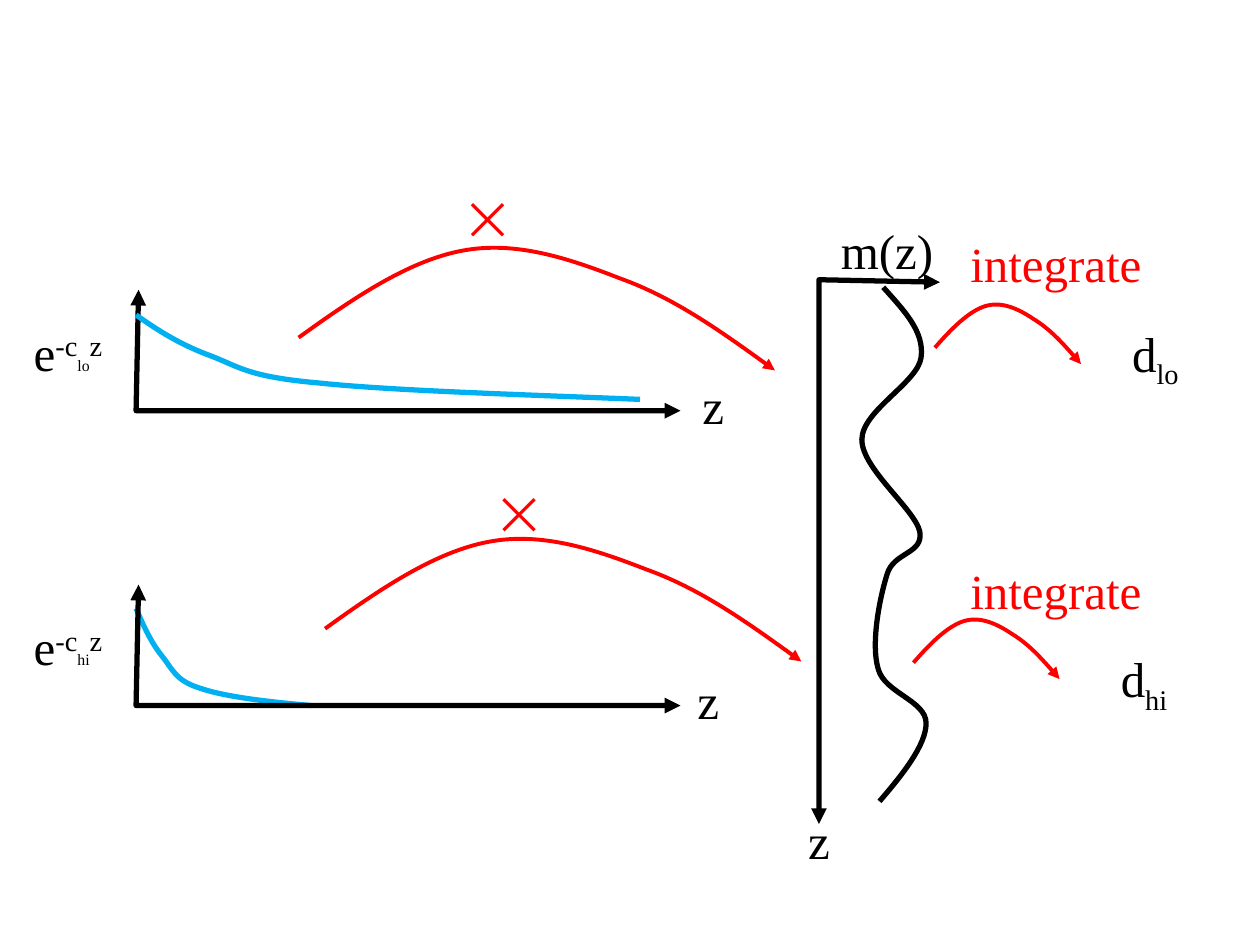
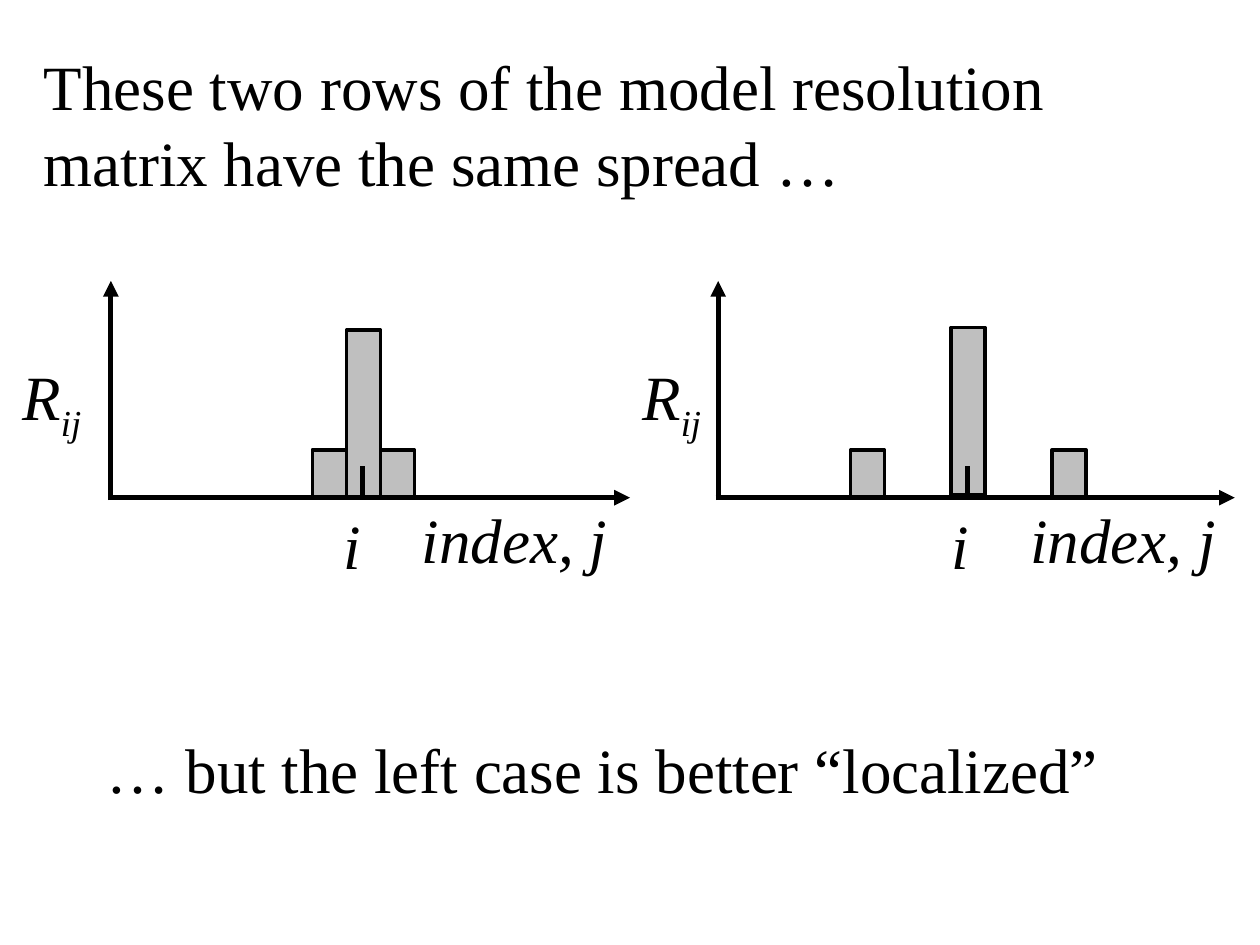
from lxml import etree
from pptx import Presentation
from pptx.dml.color import RGBColor
from pptx.enum.shapes import MSO_CONNECTOR, MSO_SHAPE
from pptx.enum.text import MSO_ANCHOR, MSO_AUTO_SIZE, PP_ALIGN
from pptx.oxml.ns import qn
from pptx.util import Pt

PX = 9144
W, H = 1000, 750
FONT = "Times New Roman"
BLACK, RED, BLUE, GREY = "000000", "FF0000", "00B0F0", "BFBFBF"
STRAIGHT, RECT = MSO_CONNECTOR.STRAIGHT, MSO_SHAPE.RECTANGLE
LEFT, CENTER = PP_ALIGN.LEFT, PP_ALIGN.CENTER
TOP, MIDDLE = MSO_ANCHOR.TOP, MSO_ANCHOR.MIDDLE
NO_FIT = MSO_AUTO_SIZE.NONE

AXES = [(110, 230), (108, 326), (540, 326)]
DEPTH_AXES = [(746, 224), (650, 222), (650, 654)]
DECAY_LO = [(108, 250), (125, 262), (142, 273), (166, 282), (190, 291), (196, 299),
            (253, 304), (310, 310), (409, 313), (508, 317)]
DECAY_HI = [(108, 483), (114, 497), (120, 510), (128, 520), (137, 531), (139, 540),
            (158, 546), (178, 553), (212, 557), (247, 560)]
MODEL = [(701, 228), (717, 246), (734, 263), (731, 284), (728, 304), (684, 326),
         (684, 349), (684, 372), (726, 404), (730, 422), (733, 440), (709, 438),
         (704, 456), (698, 475), (691, 511), (697, 531), (702, 550), (735, 556),
         (735, 574), (735, 591), (717, 614), (698, 636)]
MULTIPLY = [(237, 268), (280, 237), (324, 207), (367, 199), (409, 191), (451, 205),
            (492, 221), (534, 236), (575, 265), (615, 294)]
INTEGRATE = [(742, 276), (755, 261), (769, 247), (782, 243), (795, 239), (808, 245),
             (820, 253), (833, 261), (846, 275), (858, 289)]

ROWS = [
    dict(sub="lo", axes=0, multiply=(0, 0), integrate=(0, 0), z=(537, 305),
         cross=(358, 155), word=180, d=(867, 267)),
    dict(sub="hi", axes=234, multiply=(21, 231), integrate=(-17, 250), z=(533, 539),
         cross=(383, 389), word=439, d=(858, 525)),
]

BAR_W, BASE = 27, 395
PLOTS = [
    dict(axis=88, tip=500, tick=288, bars=[(275, 262, 133), (248, 357, 38), (302, 357, 38)],
         labels=[("R", 8, 279, 93), ("index, j", 325, 392, 213), ("i", 263, 397, 40)]),
    dict(axis=570, tip=980, tick=768, bars=[(835, 357, 38), (675, 357, 38), (755, 260, 133)],
         labels=[("R", 500, 279, 93), ("index, j", 808, 392, 192), ("i", 745, 397, 40)]),
]
STATEMENTS = [
    ("These two rows of the model resolution matrix have the same spread …", 25, 33, 842, 131),
    ("… but the left case is better “localized”", 75, 575, 842, 71),
]


def rgb(value):
    return RGBColor.from_string(value)


def write(sp, text, size=28, color=BLACK, italic=False, align=CENTER, anchor=MIDDLE):
    tf = sp.text_frame
    tf.word_wrap = True
    tf.auto_size = NO_FIT
    tf.vertical_anchor = anchor
    p = tf.paragraphs[0]
    p.alignment = align
    runs = [(text, size, 0)] if isinstance(text, str) else text
    for part, pt, baseline in runs:
        r = p.add_run()
        r.text = part
        r.font.name = FONT
        r.font.size = Pt(pt)
        r.font.italic = italic
        r.font.color.rgb = rgb(color)
        if baseline:
            r._r.get_or_add_rPr().set("baseline", str(baseline * 1000))


def label(s, text, x, y, w=58, h=33, **fmt):
    sp = s.shapes.add_textbox(x * PX, y * PX, w * PX, h * PX)
    write(sp, text, **fmt)


def stroke(sp, color=BLACK, width=3, heads=()):
    sp.line.color.rgb = rgb(color)
    sp.line.width = Pt(width)
    ln = sp.line._get_or_add_ln()
    for head in heads:
        etree.SubElement(ln, qn("a:" + head), type="triangle")


def outline(s, points, shift=(0, 0), curved=True, **fmt):
    dx, dy = shift
    start, *rest = [((x + dx) * PX, (y + dy) * PX) for x, y in points]
    builder = s.shapes.build_freeform(*start)
    builder.add_line_segments(rest, close=False)
    sp = builder.convert_to_shape()
    sp.shadow.inherit = False
    sp.fill.background()
    stroke(sp, **fmt)
    if curved:
        path = next(sp._element.iter(qn("a:path")))
        segments = path.findall(qn("a:lnTo"))
        for i in range(0, len(segments), 3):
            bezier = etree.SubElement(path, qn("a:cubicBezTo"))
            for segment in segments[i:i + 3]:
                bezier.append(segment[0])
                path.remove(segment)


def line(s, x1, y1, x2, y2, heads=()):
    cx = s.shapes.add_connector(STRAIGHT, x1 * PX, y1 * PX, x2 * PX, y2 * PX)
    stroke(cx, heads=heads)
    etree.SubElement(cx._element.spPr, qn("a:effectLst"))


def exponential(sub):
    return [("e", 28, 0), ("-c", 28, 30), (sub, 9, 0), ("z", 28, 30)]


def subscripted(base, sub, size):
    return [(base, size, 0), (sub, size, -25)]


def integration_slide(prs):
    s = prs.slides.add_slide(prs.slide_layouts[5])
    both, tail = ("headEnd", "tailEnd"), ("tailEnd",)
    lo, hi = ROWS
    title = s.shapes.title
    title.left, title.top, title.width, title.height = 0, 492 * PX, 108 * PX, 42 * PX
    write(title, exponential(hi["sub"]))
    label(s, exponential(lo["sub"]), 0, 258, 108, 42)

    outline(s, DECAY_HI, color=BLUE)
    for row in ROWS:
        outline(s, AXES, (0, row["axes"]), curved=False, heads=both)
    outline(s, DECAY_LO, color=BLUE)
    outline(s, DEPTH_AXES, curved=False, heads=both)
    outline(s, MODEL)
    label(s, "z", 621, 650)
    label(s, "m(z)", 625, 180, 158, 37)

    for row in ROWS:
        for curve in ("multiply", "integrate"):
            points = MULTIPLY if curve == "multiply" else INTEGRATE
            outline(s, points, row[curve], color=RED, width=2.25, heads=tail)
        label(s, "z", *row["z"])
        label(s, "⨉", *row["cross"], color=RED)
        label(s, "integrate", 742, row["word"], 192, 58, color=RED)
        label(s, subscripted("d", row["sub"], 28), *row["d"], w=100)


def resolution_slide(prs):
    s = prs.slides.add_slide(prs.slide_layouts[6])
    fmt = dict(size=36, align=LEFT, anchor=TOP)
    for plot in PLOTS:
        for x, y, h in plot["bars"]:
            bar = s.shapes.add_shape(RECT, x * PX, y * PX, BAR_W * PX, h * PX)
            bar.shadow.inherit = False
            bar.fill.solid()
            bar.fill.fore_color.rgb = rgb(GREY)
            stroke(bar, width=2)
        axis, tick = plot["axis"], plot["tick"]
        line(s, axis, BASE + 2, axis, 223, heads=("tailEnd",))
        line(s, axis - 2, BASE, plot["tip"], BASE, heads=("tailEnd",))
        line(s, tick, 370, tick, BASE + 2)
        for text, x, y, w in plot["labels"]:
            content = subscripted("R", "ij", 36) if text == "R" else text
            label(s, content, x, y, w, 71, italic=True, **fmt)
    for text, *box in STATEMENTS:
        label(s, text, *box, **fmt)


def main():
    prs = Presentation()
    prs.slide_width, prs.slide_height = W * PX, H * PX
    integration_slide(prs)
    resolution_slide(prs)
    prs.save("out.pptx")


if __name__ == "__main__":
    main()
